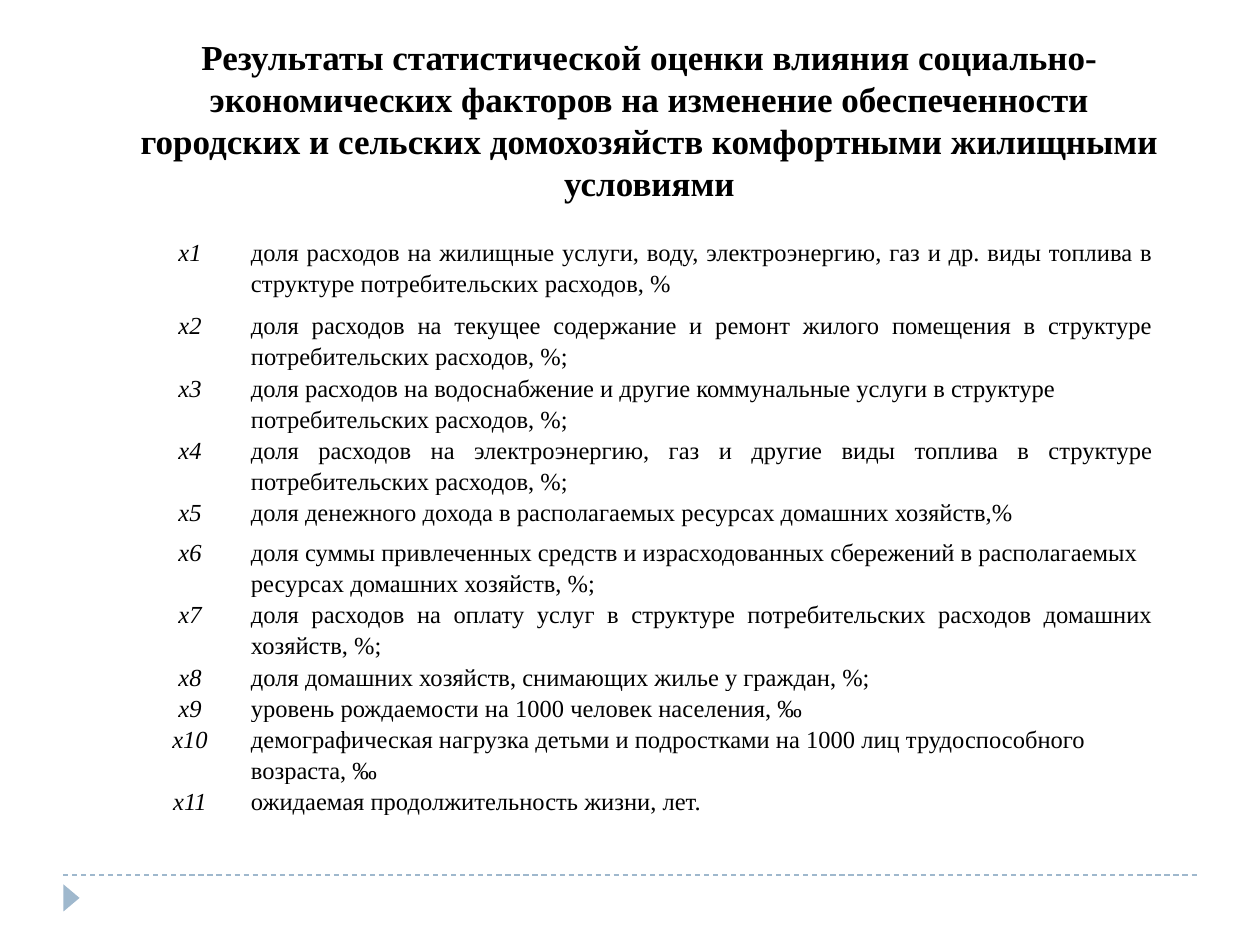
from dataclasses import dataclass

from lxml.etree import SubElement
from pptx import Presentation
from pptx.dml.color import RGBColor
from pptx.enum.dml import MSO_LINE
from pptx.enum.shapes import MSO_CONNECTOR, MSO_SHAPE
from pptx.enum.text import MSO_ANCHOR, PP_ALIGN
from pptx.oxml.ns import qn
from pptx.util import Emu, Pt


@dataclass(frozen=True)
class Theme:
    font: str = "Times New Roman"
    text: RGBColor = RGBColor(0x00, 0x00, 0x00)
    background: RGBColor = RGBColor(0xFF, 0xFF, 0xFF)
    accent: RGBColor = RGBColor(0x9F, 0xB8, 0xCD)
    title_size: Pt = Pt(20)
    body_size: Pt = Pt(14)
    rule_width: Pt = Pt(0.75)


THEME = Theme()
PIXELS_PER_INCH = 126
TITLE = (
    "Результаты статистической оценки влияния социально-экономических факторов "
    "на изменение обеспеченности городских и сельских домохозяйств "
    "комфортными жилищными условиями"
)
LEFT, JUSTIFY = PP_ALIGN.LEFT, PP_ALIGN.JUSTIFY
FACTORS = [
    (73, JUSTIFY, "доля расходов на жилищные услуги, воду, электроэнергию, газ и др. виды топлива в структуре потребительских расходов, %"),
    (55, JUSTIFY, "доля расходов на текущее содержание и ремонт жилого помещения в структуре потребительских расходов, %;"),
    (55, LEFT, "доля расходов на водоснабжение и другие коммунальные услуги в структуре потребительских расходов, %;"),
    (55, JUSTIFY, "доля расходов на электроэнергию, газ и другие виды топлива в структуре потребительских расходов, %;"),
    (40, LEFT, "доля денежного дохода в располагаемых ресурсах домашних хозяйств,%"),
    (55, LEFT, "доля суммы привлеченных средств и израсходованных сбережений в располагаемых ресурсах домашних хозяйств, %;"),
    (55, JUSTIFY, "доля расходов на оплату услуг в структуре потребительских расходов домашних хозяйств, %;"),
    (28, LEFT, "доля домашних хозяйств, снимающих жилье у граждан, %;"),
    (28, LEFT, "уровень рождаемости на 1000 человек населения, ‰"),
    (55, LEFT, "демографическая нагрузка детьми и подростками на 1000 лиц трудоспособного возраста, ‰"),
    (28, JUSTIFY, "ожидаемая продолжительность жизни, лет."),
]


def px(length):
    return Emu(round(length * 914400 / PIXELS_PER_INCH))


def style_paragraph(paragraph, size, alignment, bold=False, italic=False):
    paragraph.alignment = alignment
    font = paragraph.font
    font.name, font.size = THEME.font, size
    font.bold, font.italic = bold, italic
    font.color.rgb = THEME.text


def add_footer(slide, left, top, width):
    rule = slide.shapes.add_connector(
        MSO_CONNECTOR.STRAIGHT, px(left), px(top), px(left + width), px(top)
    )
    rule.line.color.rgb = THEME.accent
    rule.line.width = THEME.rule_width
    rule.line.dash_style = MSO_LINE.DASH
    SubElement(rule.element.spPr, qn("a:effectLst"))

    marker = slide.shapes.add_shape(
        MSO_SHAPE.ISOSCELES_TRIANGLE, px(left - 5), px(top + 15), px(27), px(16)
    )
    marker.rotation = 90
    marker.shadow.inherit = False
    marker.fill.solid()
    marker.fill.fore_color.rgb = THEME.accent
    marker.line.fill.background()


def fill_cell(cell, text, alignment, italic=False):
    cell.fill.background()
    cell.margin_left = cell.margin_right = px(8)
    cell.margin_top = cell.margin_bottom = 0
    cell.text = text
    paragraph = cell.text_frame.paragraphs[0]
    paragraph.line_spacing = 1.15
    style_paragraph(paragraph, THEME.body_size, alignment, italic=italic)


def add_factor_table(slide, left, top, width, height):
    frame = slide.shapes.add_table(
        len(FACTORS), 2, px(left), px(top), px(width), px(height)
    )
    table = frame.table
    table.first_row = table.horz_banding = False
    symbol_width = 106
    table.columns[0].width = px(symbol_width)
    table.columns[1].width = px(width - symbol_width)
    for index, (row_height, alignment, description) in enumerate(FACTORS):
        table.rows[index].height = px(row_height)
        fill_cell(table.cell(index, 0), f"x{index + 1}", PP_ALIGN.CENTER, italic=True)
        fill_cell(table.cell(index, 1), description, alignment)
    frame.height = px(height)


def add_title(slide, left, top, width, height):
    box = slide.shapes.add_textbox(px(left), px(top), px(width), px(height))
    text_frame = box.text_frame
    text_frame.word_wrap = True
    text_frame.vertical_anchor = MSO_ANCHOR.MIDDLE
    text_frame.text = TITLE
    style_paragraph(
        text_frame.paragraphs[0], THEME.title_size, PP_ALIGN.CENTER, bold=True
    )


def main():
    presentation = Presentation()
    presentation.slide_width, presentation.slide_height = px(1260), px(945)
    slide = presentation.slides.add_slide(presentation.slide_layouts[6])
    slide.background.fill.solid()
    slide.background.fill.fore_color.rgb = THEME.background
    add_footer(slide, 63, 875, 1134)
    add_factor_table(slide, 137, 236, 1024, 620)
    add_title(slide, 128, 28, 1043, 183)
    presentation.save("out.pptx")


if __name__ == "__main__":
    main()
